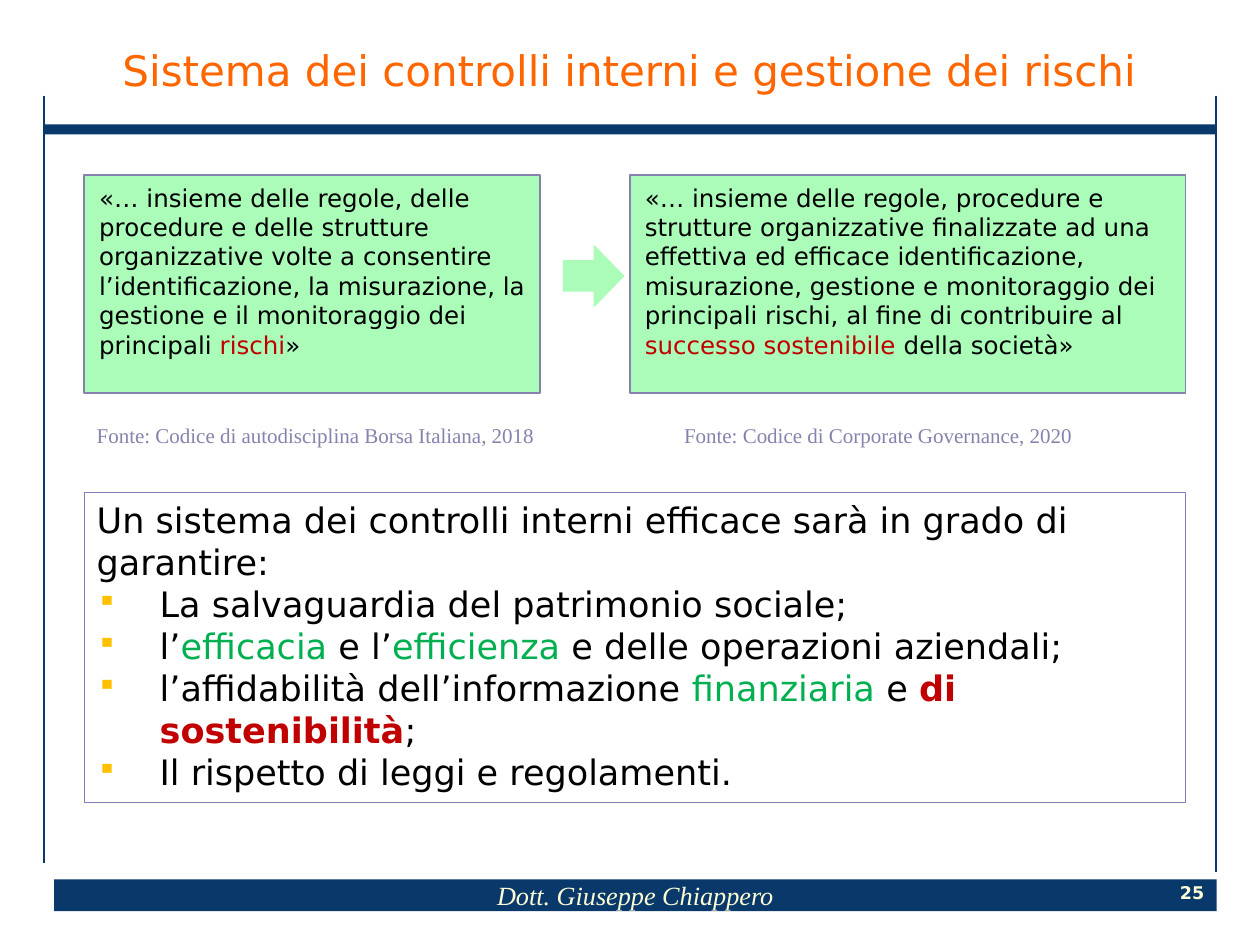
from lxml.etree import SubElement
from pptx import Presentation
from pptx.dml.color import RGBColor
from pptx.enum.shapes import MSO_CONNECTOR, MSO_SHAPE
from pptx.enum.text import MSO_ANCHOR, PP_ALIGN
from pptx.oxml.ns import qn
from pptx.util import Cm, Pt

THEME = {
    "sans": "DejaVu Sans", "serif": "Times New Roman",
    "navy": "09386A", "cream": "FEFED6", "orange": "FF6600", "black": "000000",
    "mint": "AAFCB8", "lilac": "8383AD", "border": "7F80BA",
    "red": "C00000", "green": "00B050", "gold": "FFC000",
    "title": 24, "goals": 20, "footer": 15, "quote": 14, "source": 12, "number": 10,
}

TITLE = "Sistema dei controlli interni e gestione dei rischi"
FOOTER = "Dott. Giuseppe Chiappero"
NUMBER = "25"

DEFINITIONS = [
    {
        "quote": [("«… insieme delle regole, delle procedure e delle strutture organizzative "
                   "volte a consentire l’identificazione, la misurazione, la gestione e il "
                   "monitoraggio dei principali",), (" rischi", "red"), ("»",)],
        "box": (1.7, 9.19),
        "source": "Fonte: Codice di autodisciplina Borsa Italiana, 2018",
        "source_at": (1.7, 8.4),
    },
    {
        "quote": [("«… insieme delle regole, procedure e strutture organizzative finalizzate "
                   "ad una effettiva ed efficace identificazione, misurazione, gestione e "
                   "monitoraggio dei principali rischi, al fine di contribuire al ",),
                  ("successo sostenibile ", "red"), ("della società»",)],
        "box": (12.7, 11.2),
        "source": "Fonte: Codice di Corporate Governance, 2020",
        "source_at": (13.54, 8.4),
    },
]

GOALS_INTRO = [("Un sistema dei controlli interni efficace sarà in grado di garantire:",)]
GOALS = [
    [("La salvaguardia del patrimonio sociale;",)],
    [("l’",), ("efficacia", "green"), (" e l’",), ("efficienza", "green"),
     (" e delle operazioni aziendali;",)],
    [("l’affidabilità dell’informazione ",), ("finanziaria", "green"), (" e ",),
     ("di sostenibilità", "red", True), (";",)],
    [("Il rispetto di leggi e regolamenti.",)],
]


def color(name):
    return RGBColor.from_string(THEME[name])


def place(shape, left, top, width, height):
    shape.left, shape.top, shape.width, shape.height = map(Cm, (left, top, width, height))


def add_block(slide, kind, box, fill=None, line=None, line_width=1):
    shape = slide.shapes.add_shape(kind, *map(Cm, box))
    shape.shadow.inherit = False
    if fill:
        shape.fill.solid()
        shape.fill.fore_color.rgb = color(fill)
    else:
        shape.fill.background()
    if line:
        shape.line.color.rgb = color(line)
        shape.line.width = Pt(line_width)
    else:
        shape.line.fill.background()
    return shape


def add_rule(slide, x, top, bottom):
    rule = slide.shapes.add_connector(MSO_CONNECTOR.STRAIGHT, Cm(x), Cm(top), Cm(x), Cm(bottom))
    rule.line.color.rgb = color("navy")
    rule.line.width = Pt(1)
    SubElement(rule._element.spPr, qn("a:effectLst"))


def add_bullet(paragraph):
    properties = paragraph._p.get_or_add_pPr()
    properties.set("marL", str(Cm(1.27)))
    properties.set("indent", str(-Cm(1.27)))
    bullet_color = SubElement(properties, qn("a:buClr"))
    SubElement(bullet_color, qn("a:srgbClr"), val=THEME["gold"])
    SubElement(properties, qn("a:buSzPct"), val="80000")
    SubElement(properties, qn("a:buChar"), char="▪")


def write(paragraph, runs, size, font="sans", ink="black", align=PP_ALIGN.LEFT):
    paragraph.alignment = align
    paragraph.font.name = THEME[font]
    paragraph.font.size = Pt(THEME[size])
    paragraph.font.color.rgb = color(ink)
    for text, *style in runs:
        run = paragraph.add_run()
        run.text = text
        if style:
            run.font.color.rgb = color(style[0])
            run.font.bold = True if True in style else None


def set_frame(shape, anchor=MSO_ANCHOR.TOP, wrap=True):
    frame = shape.text_frame
    frame.vertical_anchor = anchor
    frame.word_wrap = wrap
    return frame


def set_margins(frame, horizontal, vertical):
    frame.margin_left = frame.margin_right = Cm(horizontal)
    frame.margin_top = frame.margin_bottom = Cm(vertical)


def add_master_parts(slide):
    add_block(slide, MSO_SHAPE.RECTANGLE, (0.89, 2.51, 23.6, 0.2), "navy")
    footer = add_block(slide, MSO_SHAPE.RECTANGLE, (1.09, 17.73, 23.44, 0.64), "navy")
    paragraph = set_frame(footer, MSO_ANCHOR.MIDDLE).paragraphs[0]
    write(paragraph, [(FOOTER,)], "footer", "serif", "cream", PP_ALIGN.CENTER)
    paragraph.font.italic = True
    add_rule(slide, 0.89, 1.93, 17.4)
    add_rule(slide, 24.51, 1.93, 17.58)
    number = slide.shapes.add_textbox(Cm(23.7), Cm(17.73), Cm(0.66), Cm(0.51))
    frame = set_frame(number, MSO_ANCHOR.MIDDLE, False)
    set_margins(frame, 0, 0)
    paragraph = frame.paragraphs[0]
    write(paragraph, [(NUMBER,)], "number", "sans", "cream", PP_ALIGN.CENTER)
    paragraph.font.bold = True


def add_title(slide):
    title = slide.shapes.title
    place(title, 0.69, 0.86, 24, 1.27)
    paragraph = set_frame(title, MSO_ANCHOR.MIDDLE, False).paragraphs[0]
    write(paragraph, [(TITLE,)], "title", "sans", "orange", PP_ALIGN.CENTER)
    paragraph.line_spacing = 0.8


def add_definition(slide, definition):
    left, width = definition["box"]
    box = add_block(slide, MSO_SHAPE.RECTANGLE, (left, 3.53, width, 4.39), "mint", "lilac")
    frame = set_frame(box)
    set_margins(frame, 0.3, 0.15)
    frame.margin_right = Cm(0.25)
    write(frame.paragraphs[0], definition["quote"], "quote")
    source = slide.shapes.add_textbox(*map(Cm, definition["source_at"]), Cm(9.78), Cm(0.76))
    write(set_frame(source).paragraphs[0], [(definition["source"],)], "source", "serif", "lilac")


def add_goals(slide):
    box = add_block(slide, MSO_SHAPE.RECTANGLE, (1.7, 9.93, 22.2, 6.25), None, "border", 0.75)
    frame = set_frame(box)
    write(frame.paragraphs[0], GOALS_INTRO, "goals")
    for goal in GOALS:
        paragraph = frame.add_paragraph()
        add_bullet(paragraph)
        write(paragraph, goal, "goals")


def main():
    presentation = Presentation()
    presentation.slide_width, presentation.slide_height = Cm(25.4), Cm(19.05)
    slide = presentation.slides.add_slide(presentation.slide_layouts[5])
    add_master_parts(slide)
    add_title(slide)
    for definition in DEFINITIONS:
        add_definition(slide, definition)
    add_goals(slide)
    add_block(slide, MSO_SHAPE.RIGHT_ARROW, (11.35, 4.93, 1.24, 1.27), "mint")
    presentation.save("out.pptx")


if __name__ == "__main__":
    main()
